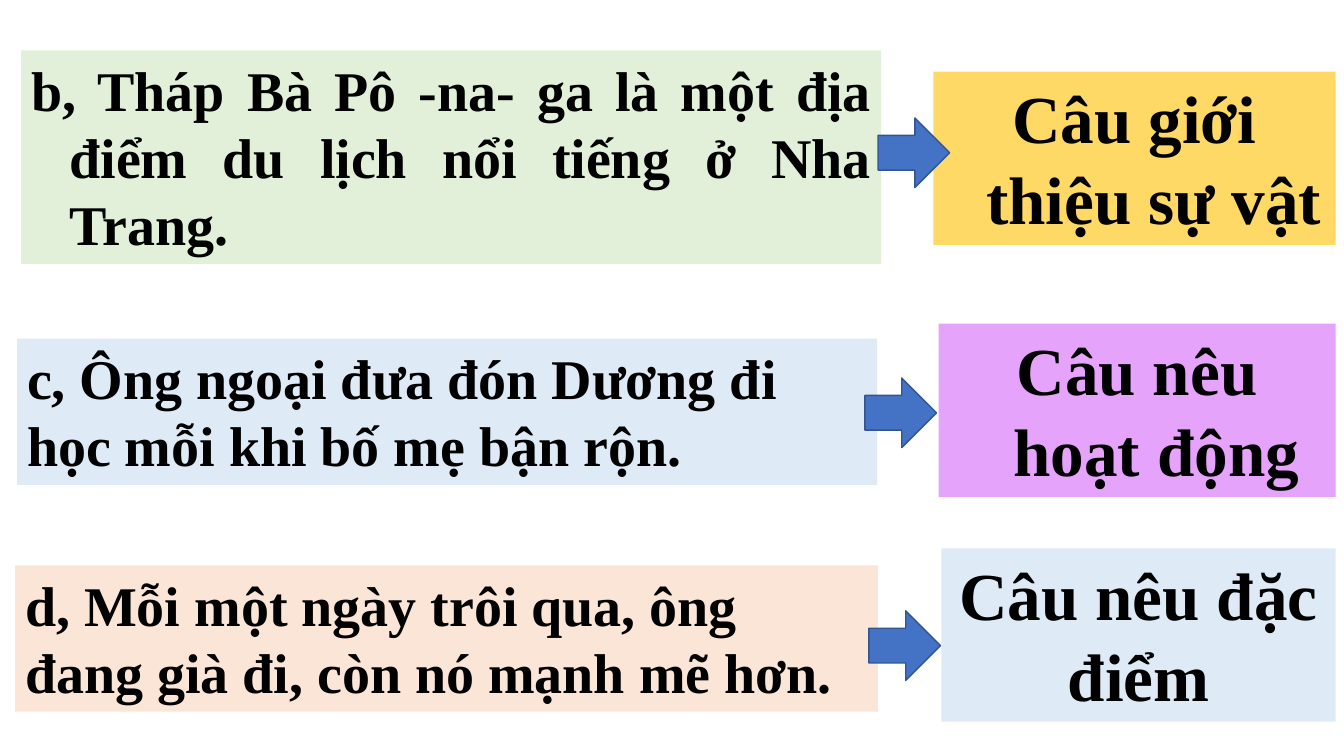
from dataclasses import dataclass

from pptx import Presentation
from pptx.dml.color import RGBColor
from pptx.enum.shapes import MSO_SHAPE as Preset
from pptx.enum.text import MSO_ANCHOR as Anchor, MSO_AUTO_SIZE as AutoSize, PP_ALIGN as Align
from pptx.util import Inches, Pt

SLIDE_W, SLIDE_H = Inches(13.333), Inches(7.5)
FONT = "Times New Roman"
HANGING = Inches(0.38)
COLORS = {
    "text": "000000", "green": "E2F0D9", "blue": "DEEBF7", "peach": "FBE5D6",
    "gold": "FFD966", "violet": "E6A3FB", "arrow": "4472C4", "arrow_edge": "325491",
}

# Shares of the slide, in percent
LABEL_RIGHT, LABEL_H = 99.38, 22.93
ARROW_W, ARROW_H = 5.33, 9.2


@dataclass
class Panel:
    """A filled text panel: left, vertical centre, width and height in percent."""
    text: str
    fill: str
    left: float
    middle: float
    width: float
    height: float
    align: Align = Align.LEFT
    hanging: bool = False


def label(text, fill, left, middle, hanging=True):
    return Panel(text, fill, left, middle, LABEL_RIGHT - left, LABEL_H, Align.CENTER, hanging)


SENTENCES = [
    Panel("b, Tháp Bà Pô -na- ga là một địa điểm du lịch nổi tiếng ở Nha Trang.",
          "green", 1.58, 20.8, 63.98, 28.27, Align.JUSTIFY, True),
    Panel("c, Ông ngoại đưa đón Dương đi học mỗi khi bố mẹ bận rộn.",
          "blue", 1.28, 54.47, 63.98, 19.33),
    Panel("d, Mỗi một ngày trôi qua, ông đang già đi, còn nó mạnh mẽ hơn.",
          "peach", 1.13, 84.47, 64.2, 19.33),
]
SENTENCE_TYPES = [
    label("Câu giới thiệu sự vật", "gold", 69.45, 20.93),
    label("Câu nêu hoạt động", "violet", 69.83, 54.27),
    label("Câu nêu đặc điểm", "blue", 70.05, 84, hanging=False),
]
ARROWS = [(65.33, 20.2), (64.35, 54.6), (64.65, 85.4)]


def rgb(name):
    return RGBColor.from_string(COLORS[name])


def add_filled(slide, preset, fill, left, middle, width, height):
    """Add a shape centred vertically on middle, all lengths in percent."""
    shape = slide.shapes.add_shape(
        preset, int(SLIDE_W * left / 100), int(SLIDE_H * (middle - height / 2) / 100),
        int(SLIDE_W * width / 100), int(SLIDE_H * height / 100))
    shape.shadow.inherit = False
    shape.fill.solid()
    shape.fill.fore_color.rgb = rgb(fill)
    return shape


def add_panel(slide, panel, size):
    shape = add_filled(slide, Preset.RECTANGLE, panel.fill, panel.left,
                       panel.middle, panel.width, panel.height)
    shape.line.fill.background()
    frame = shape.text_frame
    frame.text = panel.text
    frame.word_wrap = True
    frame.auto_size = AutoSize.SHAPE_TO_FIT_TEXT
    frame.vertical_anchor = Anchor.TOP
    paragraph = frame.paragraphs[0]
    paragraph.alignment = panel.align
    if panel.hanging:
        properties = paragraph._p.get_or_add_pPr()
        properties.set("marL", str(HANGING))
        properties.set("indent", str(-HANGING))
    font = paragraph.runs[0].font
    font.name, font.size, font.bold = FONT, Pt(size), True
    font.color.rgb = rgb("text")


def add_arrow(slide, left, middle):
    arrow = add_filled(slide, Preset.RIGHT_ARROW, "arrow", left, middle, ARROW_W, ARROW_H)
    arrow.line.color.rgb = rgb("arrow_edge")
    arrow.line.width = Pt(1)


def main():
    deck = Presentation()
    deck.slide_width, deck.slide_height = SLIDE_W, SLIDE_H
    slide = deck.slides.add_slide(deck.slide_layouts[6])
    for sentence in SENTENCES:
        add_panel(slide, sentence, 40)
    for sentence_type in SENTENCE_TYPES:
        add_panel(slide, sentence_type, 48)
    for left, middle in ARROWS:
        add_arrow(slide, left, middle)
    deck.save("out.pptx")


if __name__ == "__main__":
    main()
